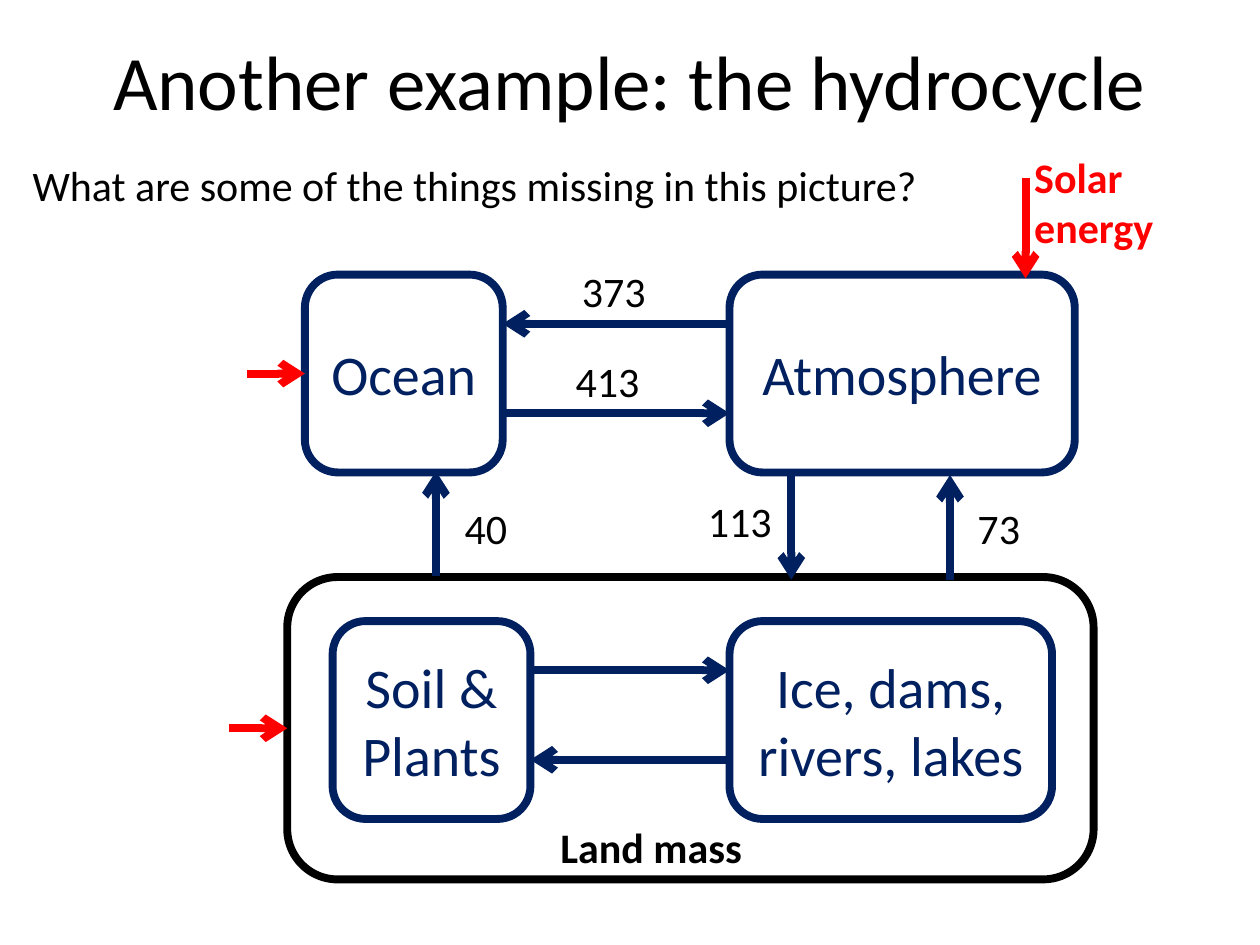
from lxml import etree
from pptx import Presentation
from pptx.dml.color import RGBColor
from pptx.enum.shapes import MSO_CONNECTOR, MSO_SHAPE
from pptx.enum.text import MSO_ANCHOR, MSO_AUTO_SIZE, PP_ALIGN
from pptx.oxml.ns import qn
from pptx.util import Inches, Pt

NAVY = RGBColor(0x00, 0x20, 0x60)
RED = RGBColor(0xFF, 0x00, 0x00)
BLACK = RGBColor(0x00, 0x00, 0x00)
ROUNDED = MSO_SHAPE.ROUNDED_RECTANGLE
STRAIGHT = MSO_CONNECTOR.STRAIGHT
MIDDLE = MSO_ANCHOR.MIDDLE
CENTER, LEFT = PP_ALIGN.CENTER, PP_ALIGN.LEFT
FIT_TEXT = MSO_AUTO_SIZE.SHAPE_TO_FIT_TEXT
LEFT_SIDE = 1
LINE_WIDTH = Pt(4.5)
STORE_SIZE = 1.57


def write(tf, text, size, color, align=LEFT, bold=False):
    """Fill a text frame, one paragraph per line of text."""
    tf.text = text
    font_values = {"name": "Calibri", "size": Pt(size), "bold": bold}
    for p in tf.paragraphs:
        p.alignment = align
        for r in p.runs:
            for name, value in font_values.items():
                setattr(r.font, name, value)
            r.font.color.rgb = color


def add_title(s, text, x, y, w, h):
    """Place the slide title in its placeholder."""
    title = s.shapes.title
    box = {"left": x, "top": y, "width": w, "height": h}
    for name, value in box.items():
        setattr(title, name, Inches(value))
    title.text_frame.vertical_anchor = MIDDLE
    write(title.text_frame, text, 44, BLACK, CENTER)


def add_label(s, text, x, y, w, h=0.5, color=BLACK, bold=False):
    """Add an unwrapped text label."""
    tf = s.shapes.add_textbox(*map(Inches, (x, y, w, h))).text_frame
    tf.word_wrap = False
    tf.auto_size = FIT_TEXT
    write(tf, text, 24, color, bold=bold)


def add_store(s, text, x, y, w, h=STORE_SIZE, color=NAVY):
    """Add a rounded outline that stands for a store of water."""
    sp = s.shapes.add_shape(ROUNDED, *map(Inches, (x, y, w, h)))
    sp.shadow.inherit = False
    sp.fill.background()
    sp.line.color.rgb = color
    sp.line.width = LINE_WIDTH
    if text:
        sp.text_frame.word_wrap = True
        sp.text_frame.vertical_anchor = MIDDLE
        write(sp.text_frame, text, 32, color, CENTER)
    return sp


def add_arrow(s, x1, y1, x2, y2, color=NAVY):
    """Add an arrow pointing at its second end."""
    c = s.shapes.add_connector(STRAIGHT, *map(Inches, (x1, y1, x2, y2)))
    c.line.color.rgb = color
    c.line.width = LINE_WIDTH
    etree.SubElement(c.line._get_or_add_ln(), qn("a:tailEnd"), type="arrow")
    etree.SubElement(c._element.spPr, qn("a:effectLst"))
    return c


def add_exchange(s, x1, x2, upper_y, lower_y, upper_leftward):
    """Add a pair of opposite horizontal flows between two stores."""
    for y, leftward in ((upper_y, upper_leftward), (lower_y, not upper_leftward)):
        start, end = (x2, x1) if leftward else (x1, x2)
        add_arrow(s, start, y, end, y)


def add_heat_input(s, store, length=0.46):
    """Add a red arrow into the middle of a store's left side."""
    x = store.left / Inches(1)
    y = (store.top + store.height / 2) / Inches(1)
    c = add_arrow(s, x - length, y, x, y, RED)
    c.end_connect(store, LEFT_SIDE)


def add_upper_stores(s, x, y):
    """Add ocean and atmosphere with their exchange and solar input."""
    atmosphere_x = x + 3.37
    ocean = add_store(s, "Ocean", x, y, STORE_SIZE)
    add_store(s, "Atmosphere", atmosphere_x, y, 2.74)
    add_exchange(s, x + STORE_SIZE, atmosphere_x, y + 0.39, y + 1.1, True)
    add_label(s, "373", x + 2.1, y - 0.12, 0.71)
    add_label(s, "413", x + 2.05, y + 0.59, 0.71)
    add_heat_input(s, ocean)
    add_arrow(s, x + 5.72, y - 0.77, x + 5.72, y + 0.03, RED)
    add_label(s, "Solar \venergy", x + 5.69, y - 1.03, 1.16, 0.91, RED, True)


def add_land_mass(s, x, y, w, h):
    """Add the land mass frame with its two inner stores."""
    soil_x, lakes_x, store_y = x + 0.36, x + 3.51, y + 0.35
    land = add_store(s, "", x, y, w, h, BLACK)
    add_store(s, "Soil &\nPlants", soil_x, store_y, STORE_SIZE)
    add_store(s, "Ice, dams, rivers, lakes", lakes_x, store_y, 2.56)
    add_exchange(s, soil_x + STORE_SIZE, lakes_x, store_y + 0.39, store_y + 1.1, False)
    add_label(s, "Land mass", x + 2.07, y + 1.89, 1.66, bold=True)
    add_heat_input(s, land)


def add_vertical_flows(s, top, bottom):
    """Add the labelled flows between the land mass and the upper stores."""
    flows = (
        ("40", 3.46, bottom, top, 3.59, 3.94, 0.54),
        ("113", 6.28, top, bottom + 0.03, 5.52, 3.88, 0.71),
        ("73", 7.54, bottom + 0.03, top + 0.03, 7.66, 3.94, 0.54),
    )
    for text, x, start, end, label_x, label_y, label_w in flows:
        add_arrow(s, x, start, x, end)
        add_label(s, text, label_x, label_y, label_w)


def main():
    """Build the hydrocycle slide."""
    prs = Presentation()
    prs.slide_width, prs.slide_height = Inches(10), Inches(7.5)
    s = prs.slides.add_slide(prs.slide_layouts[5])
    add_title(s, "Another example: the hydrocycle", 0.5, 0.01, 9, 1.25)
    add_label(s, "What are some of the things missing in this picture?", 0.16, 1.22, 7.28)
    add_upper_stores(s, 2.42, 2.18)
    add_land_mass(s, 2.28, 4.58, 6.4, 2.4)
    add_vertical_flows(s, 3.74, 4.57)
    prs.save("out.pptx")


if __name__ == "__main__":
    main()
